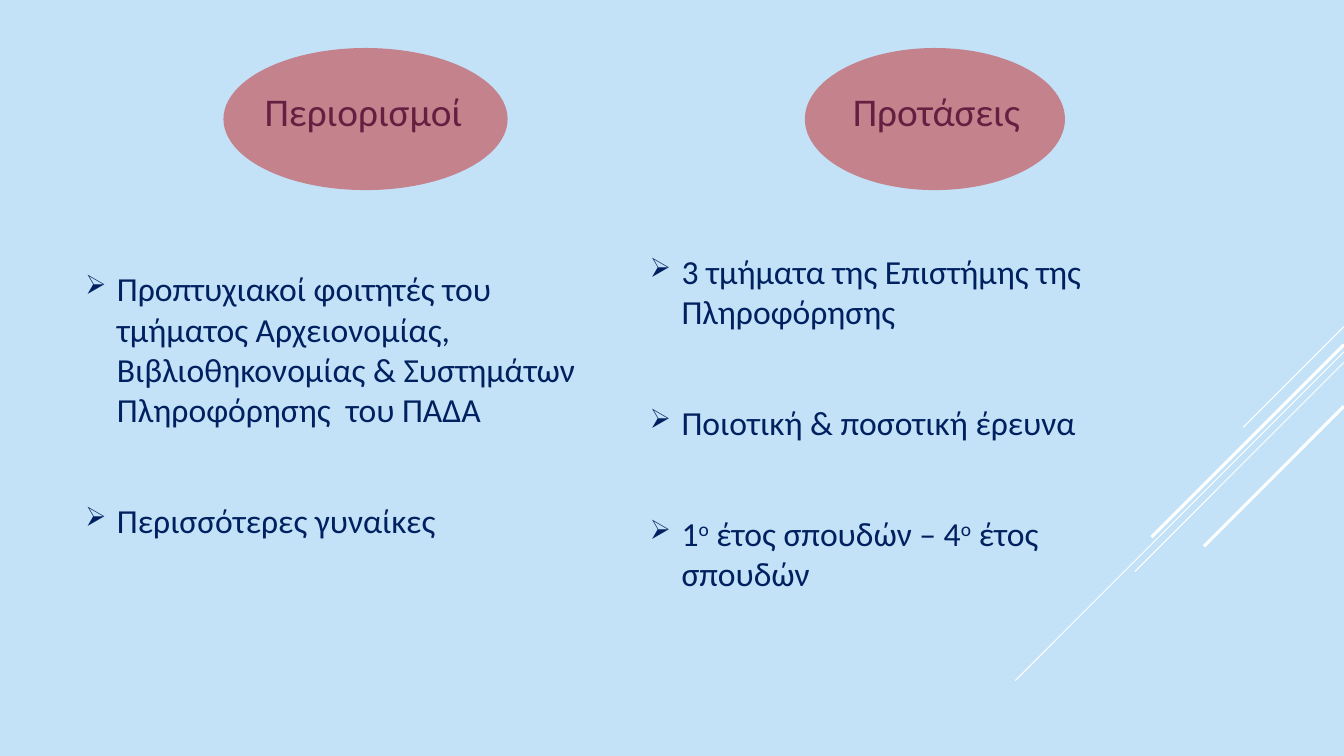
from lxml import etree
from pptx import Presentation
from pptx import util as u
from pptx.dml.color import RGBColor
from pptx.enum import shapes, text
from pptx.oxml.ns import qn

COLORS = {"sky": "C3E2F7", "navy": "002060", "red": "C62324", "white": "FFFFFF"}
FONT = "Calibri"
LINE_PITCH, ITEM_GAP, HANG = 28.8, 50.4, 22.5

# Boxes are left, top, width, height; "^" encloses superscript letters.
COLUMNS = [
    {
        "heading": "Περιορισμοί",
        "heading_box": (76.3, 54, 366.5, 45.4),
        "ellipse_box": (159.6, 34.3, 203, 101.5),
        "items": [
            "Προπτυχιακοί φοιτητές του τμήματος Αρχειονομίας, "
            "Βιβλιοθηκονομίας & Συστημάτων Πληροφόρησης  του ΠΑΔΑ",
            "Περισσότερες γυναίκες",
        ],
        "items_box": (54, 148.3, 388.8, 307.4),
        "fill": "sky",
    },
    {
        "heading": "Προτάσεις",
        "heading_box": (485.3, 54, 367.2, 45.4),
        "ellipse_box": (574.9, 34.3, 185.8, 101.5),
        "items": [
            "3 τμήματα της Επιστήμης της Πληροφόρησης",
            "Ποιοτική & ποσοτική έρευνα",
            "1^ο^ έτος σπουδών – 4^ο^ έτος σπουδών",
        ],
        "items_box": (457.2, 136.1, 388.1, 290.9),
        "fill": None,
    },
]
# Diagonal rays: height at the right edge, horizontal run, line width
RAYS = [
    (233.3, 72, 0.75),
    (251.3, 234.7, 0.75),
    (258.8, 149.4, 0.75),
    (246.2, 137.5, 2.25),
    (290.2, 100, 2.25),
]


def rgb(name):
    return RGBColor.from_string(COLORS[name])


def points(values):
    return [u.Pt(value) for value in values]


def add_bullet(paragraph):
    props = paragraph._p.get_or_add_pPr()
    props.set("marL", str(u.Pt(HANG)))
    props.set("indent", str(-u.Pt(HANG)))
    tint = etree.SubElement(props, qn("a:buClr"))
    etree.SubElement(tint, qn("a:srgbClr"), val=COLORS["navy"])
    etree.SubElement(props, qn("a:buSzPct"), val="80000")
    etree.SubElement(props, qn("a:buChar"), char="➢")


def add_text(slide, paragraphs, box, size, *, align=text.PP_ALIGN.LEFT,
             anchor=text.MSO_ANCHOR.TOP, top_inset=3.6, pitch=None, gap=0,
             bullets=False, fill=None):
    holder = slide.shapes.add_textbox(*points(box))
    if fill:
        holder.fill.solid()
        holder.fill.fore_color.rgb = rgb(fill)
    frame = holder.text_frame
    frame.word_wrap = True
    frame.vertical_anchor = anchor
    frame.margin_top = u.Pt(top_inset)
    for index, wording in enumerate(paragraphs):
        paragraph = frame.add_paragraph() if index else frame.paragraphs[0]
        paragraph.alignment = align
        if pitch:
            paragraph.line_spacing = u.Pt(pitch)
        paragraph.space_before = u.Pt(gap if index else 0)
        if bullets:
            add_bullet(paragraph)
        for part, piece in enumerate(wording.split("^")):
            run = paragraph.add_run()
            run.text = piece
            run.font.size = u.Pt(size)
            run.font.name = FONT
            run.font.color.rgb = rgb("navy")
            if part % 2:
                run._r.get_or_add_rPr().set("baseline", "30000")


def add_ray(slide, right, top, reach, width):
    ray = slide.shapes.add_connector(
        shapes.MSO_CONNECTOR.STRAIGHT,
        *points((right, top, right - reach, top + reach)))
    ray.line.color.rgb = rgb("white")
    ray.line.width = u.Pt(width)
    etree.SubElement(ray._element.spPr, qn("a:effectLst"))


def add_veil(slide, box):
    """Lay a half-transparent ellipse over a heading."""
    veil = slide.shapes.add_shape(shapes.MSO_SHAPE.OVAL, *points(box))
    veil.shadow.inherit = False
    veil.line.fill.background()
    veil.fill.solid()
    veil.fill.fore_color.rgb = rgb("red")
    tint = veil._element.spPr.find(".//" + qn("a:srgbClr"))
    etree.SubElement(tint, qn("a:alpha"), val="50000")


def main():
    deck = Presentation()
    deck.slide_width, deck.slide_height = points((960, 540))
    slide = deck.slides.add_slide(deck.slide_layouts[6])
    slide.background.fill.solid()
    slide.background.fill.fore_color.rgb = rgb("sky")

    for top, reach, width in RAYS:
        add_ray(slide, 960, top, reach, width)
    for column in COLUMNS:
        add_text(slide, [column["heading"]], column["heading_box"], 28,
                 align=text.PP_ALIGN.CENTER, anchor=text.MSO_ANCHOR.BOTTOM)
        add_text(slide, column["items"], column["items_box"], 24,
                 top_inset=43.2, pitch=LINE_PITCH, gap=ITEM_GAP,
                 bullets=True, fill=column["fill"])
        add_veil(slide, column["ellipse_box"])
    deck.save("out.pptx")


if __name__ == "__main__":
    main()
